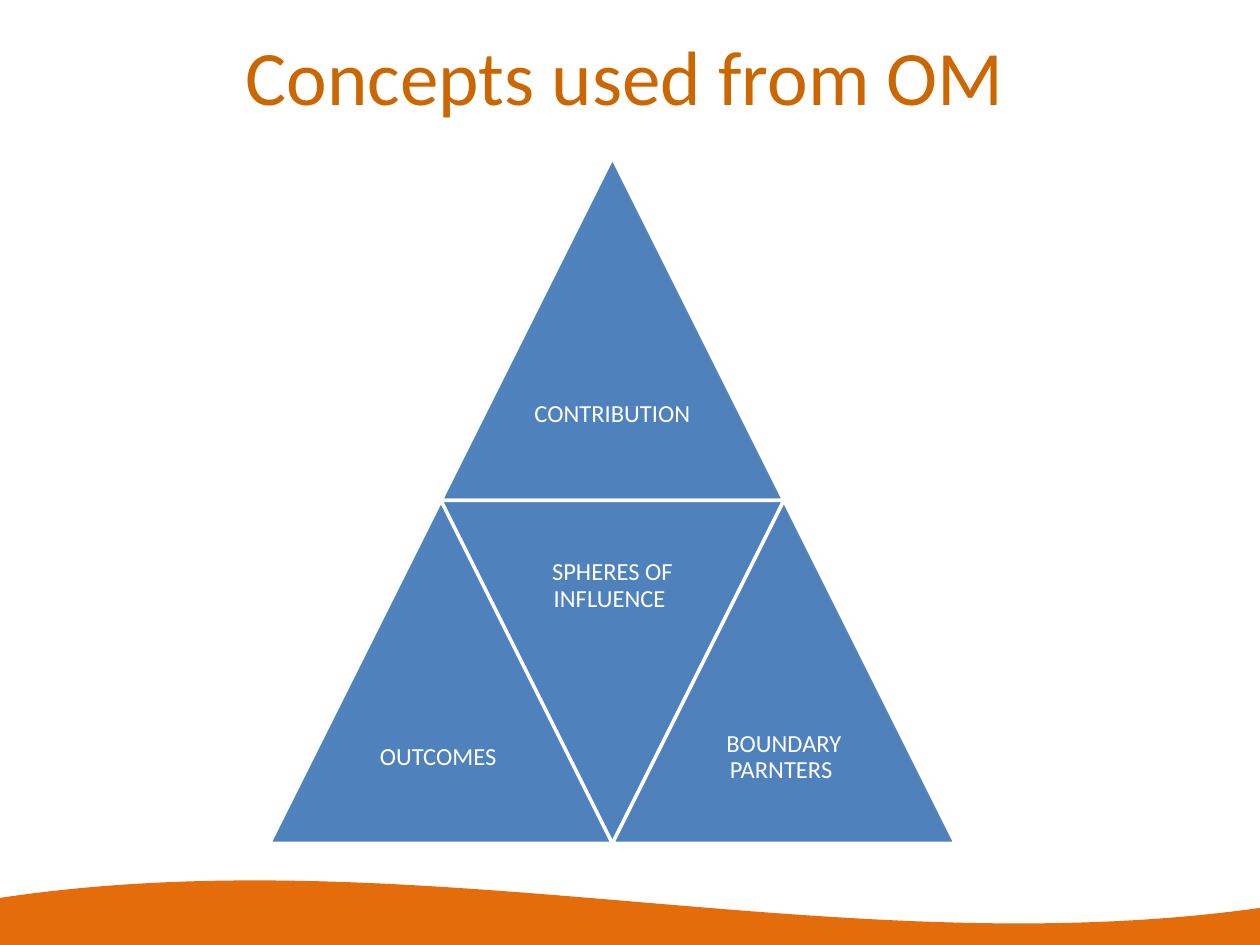
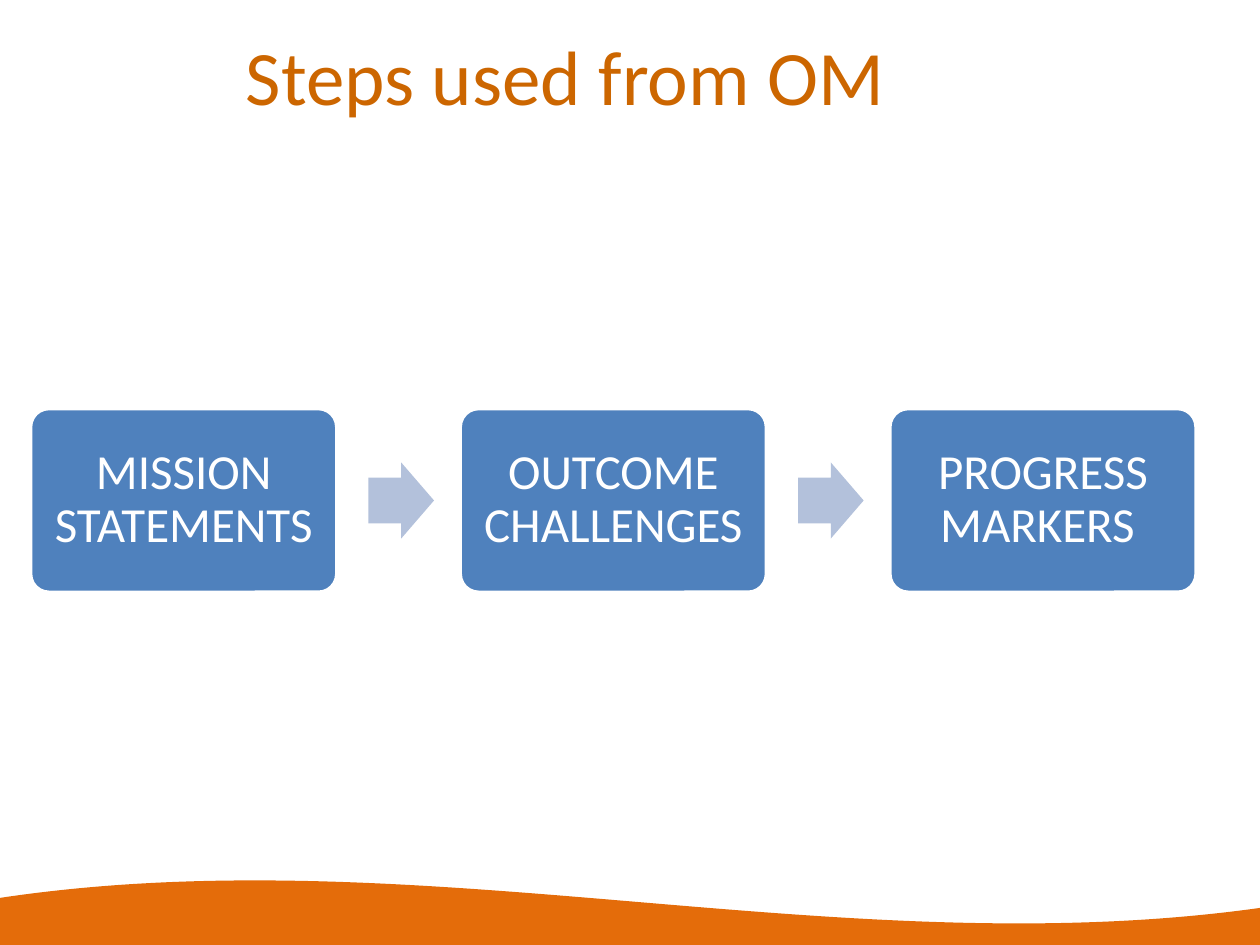
import pptx
import pptx.dml.color
import pptx.enum.shapes
import pptx.enum.text
import pptx.util

Pt = pptx.util.Pt
SHAPES = pptx.enum.shapes.MSO_SHAPE
ALIGN = pptx.enum.text.PP_ALIGN
MIDDLE = pptx.enum.text.MSO_ANCHOR.MIDDLE

ORANGE, TITLE_ORANGE, BLUE, PALE_BLUE, WHITE = "E46C0A", "CC6600", "4F81BD", "B3C1DB", "FFFFFF"

CONCEPTS_TITLE = "Concepts used from OM"
CONCEPTS = [
    ("CONTRIBUTION", SHAPES.ISOSCELES_TRIANGLE, 1, 0),
    ("OUTCOMES ", SHAPES.ISOSCELES_TRIANGLE, 0, 1),
    ("SPHERES OF INFLUENCE ", SHAPES.FLOWCHART_MERGE, 1, 1),
    ("BOUNDARY PARNTERS ", SHAPES.ISOSCELES_TRIANGLE, 2, 1),
]
STEPS_TITLE = "Steps used from OM"
STEPS = ["MISSION STATEMENTS", "OUTCOME CHALLENGES ", "PROGRESS MARKERS "]

TITLE_LEFT, TITLE_TOP, TITLE_HEIGHT = 133.2, 11.5, 62.6
WAVE_BOX = (-14.4, 502.6, 756.7, 102.2)
PYRAMID_LEFT, PYRAMID_TOP, TRIANGLE_SIDE = 154, 90, 196
STEP_LEFT, STEP_MIDDLE, STEP_WIDTH, STEP_HEIGHT, STEP_PITCH = 17.5, 286, 175, 105, 245.5
ARROW_GAP, ARROW_WIDTH, ARROW_HEIGHT = 18, 37.5, 43.5


def color(value):
    return pptx.dml.color.RGBColor.from_string(value)


def apply(target, values):
    for name, value in values.items():
        setattr(target, name, value)


def write(shape, text, size, text_color, inset, paragraph_format):
    frame = shape.text_frame
    frame.text = text
    margins = dict(zip(("margin_left", "margin_right", "margin_top", "margin_bottom"), map(Pt, inset)))
    apply(frame, {"word_wrap": True, "vertical_anchor": MIDDLE,
                  "auto_size": pptx.enum.text.MSO_AUTO_SIZE.NONE, **margins})
    paragraph = frame.paragraphs[0]
    apply(paragraph, paragraph_format)
    font = paragraph.runs[0].font
    apply(font, {"name": "Calibri", "size": Pt(size)})
    font.color.rgb = color(text_color)


def add_shape(slide, kind, box, fill, outline=None, adjustments=()):
    shape = slide.shapes.add_shape(kind, *map(Pt, box))
    shape.shadow.inherit = False
    shape.fill.solid()
    shape.fill.fore_color.rgb = color(fill)
    if outline:
        shape.line.color.rgb = color(outline)
        shape.line.width = Pt(2)
    else:
        shape.line.fill.background()
    for index, value in enumerate(adjustments):
        shape.adjustments[index] = value
    return shape


def add_label(shape, text, size, inset):
    write(shape, text, size, WHITE, [inset] * 4, {"alignment": ALIGN.CENTER, "line_spacing": 0.9})


def add_slide(presentation, title_text, title_width):
    slide = presentation.slides.add_slide(presentation.slide_layouts.get_by_name("Title Only"))
    add_shape(slide, SHAPES.WAVE, WAVE_BOX, ORANGE)
    title = slide.shapes.title
    apply(title, {"left": Pt(TITLE_LEFT), "top": Pt(TITLE_TOP),
                  "width": Pt(title_width), "height": Pt(TITLE_HEIGHT)})
    write(title, title_text, 44, TITLE_ORANGE, (7.2, 7.2, 3.6, 3.6), {"alignment": ALIGN.LEFT})
    return slide


def build_concepts(presentation):
    slide = add_slide(presentation, CONCEPTS_TITLE, 572.4)
    for text, kind, half_steps, row in CONCEPTS:
        left = PYRAMID_LEFT + half_steps * TRIANGLE_SIDE / 2
        top = PYRAMID_TOP + row * TRIANGLE_SIDE
        triangle = add_shape(slide, kind, (left, top, TRIANGLE_SIDE, TRIANGLE_SIDE), BLUE, WHITE)
        add_label(triangle, text, 14, 4.2)


def build_steps(presentation):
    slide = add_slide(presentation, STEPS_TITLE, 550.8)
    for index, text in enumerate(STEPS):
        left = STEP_LEFT + index * STEP_PITCH
        box = (left, STEP_MIDDLE - STEP_HEIGHT / 2, STEP_WIDTH, STEP_HEIGHT)
        step = add_shape(slide, SHAPES.ROUNDED_RECTANGLE, box, BLUE, WHITE, [0.1])
        add_label(step, text, 28, 8.4)
        if index < len(STEPS) - 1:
            arrow_box = (left + STEP_WIDTH + ARROW_GAP, STEP_MIDDLE - ARROW_HEIGHT / 2,
                         ARROW_WIDTH, ARROW_HEIGHT)
            add_shape(slide, SHAPES.RIGHT_ARROW, arrow_box, PALE_BLUE, adjustments=[0.6, 0.5])


def main():
    presentation = pptx.Presentation()
    apply(presentation, {"slide_width": Pt(720), "slide_height": Pt(540)})
    build_concepts(presentation)
    build_steps(presentation)
    presentation.save("out.pptx")


if __name__ == "__main__":
    main()
